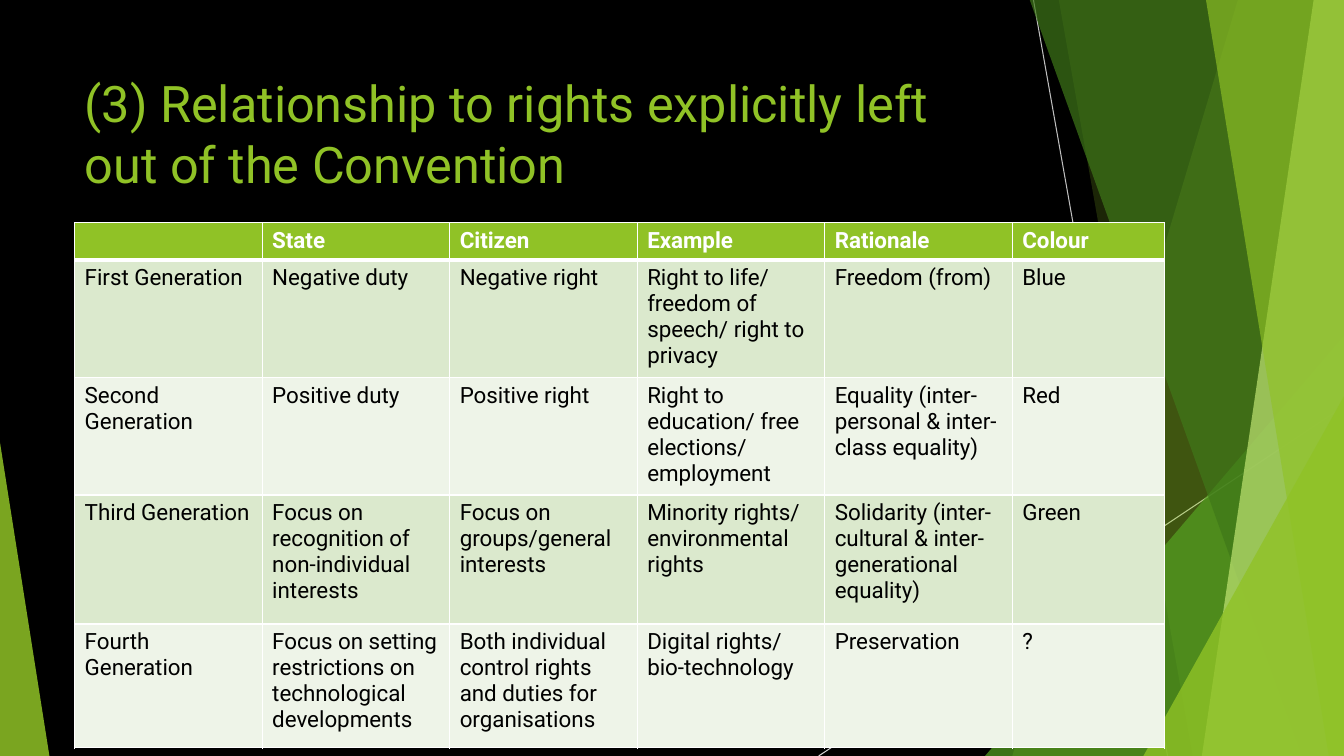
import pptx
import pptx.util
import pptx.dml.color
import pptx.enum.shapes
import pptx.enum.text
import pptx.oxml
from pptx.oxml.ns import qn
from lxml import etree

Inches, Pt = pptx.util.Inches, pptx.util.Pt
Color = pptx.dml.color.RGBColor
Kind = pptx.enum.shapes.MSO_SHAPE

WIDE, HIGH = 13.33, 7.5
FONT = "Roboto"
BLACK = Color(0x00, 0x00, 0x00)
WHITE = Color(0xFF, 0xFF, 0xFF)
LIME = Color(0x90, 0xC2, 0x26)
GRASS = Color(0x54, 0xA0, 0x21)
MOSS = Color(0x3F, 0x78, 0x19)
PALE = Color(0xC0, 0xE4, 0x74)
MIST = Color(0xDB, 0xE9, 0xCD)
FROST = Color(0xEE, 0xF4, 0xE8)
SILVER = Color(0xBF, 0xBF, 0xBF)
ASH = Color(0xD9, 0xD9, 0xD9)

TITLE = "(3) Relationship to rights explicitly left out of the Convention"
ROWS = [
    ("", "State", "Citizen", "Example", "Rationale", "Colour"),
    ("First Generation", "Negative duty", "Negative right",
     "Right to life/ freedom of speech/ right to privacy",
     "Freedom (from)", "Blue"),
    ("Second Generation", "Positive duty", "Positive right",
     "Right to education/ free elections/ employment",
     "Equality (inter-personal & inter-class equality)", "Red"),
    ("Third Generation", "Focus on recognition of non-individual interests",
     "Focus on groups/general interests",
     "Minority rights/ environmental rights",
     "Solidarity (inter-cultural & inter-generational equality)", "Green"),
    ("Fourth Generation",
     "Focus on setting restrictions on technological developments",
     "Both individual control rights and duties for organisations",
     "Digital rights/ bio-technology", "Preservation", "?"),
]
COLS = [1.86] * 5 + [1.51]
TALL = [0.36, 1.13, 1.13, 1.28, 1.23]

# start x, start y, end x, end y, colour
RAYS = [(10.25, 0, 11.58, HIGH, SILVER), (WIDE, 4.03, 8.12, HIGH, ASH)]
# Panels run to the right edge: top x, bottom x, colour, opacity
# Corners rise from the bottom edge: left, top, width, apex, colour, opacity
DECOR = [
    ("panel", 12.28, 10.04, LIME, 30),
    ("panel", 10.5, 11.83, LIME, 20),
    ("corner", 9.77, 3.33, 3.56, 1, GRASS, 72),
    ("panel", 10.21, 12.91, MOSS, 70),
    ("panel", 13.03, 11.92, PALE, 70),
    ("panel", 11.96, 13.18, LIME, 65),
    ("corner", 11.34, 3.93, 1.99, 1, LIME, 80),
    ("corner", 0, 4.39, 0.49, 0, LIME, 85),
]


def tint(shape, color, alpha):
    """Fill a shape with a see-through colour, without line or shadow."""
    shape.shadow.inherit = False
    shape.line.fill.background()
    shape.fill.solid()
    shape.fill.fore_color.rgb = color
    tone = shape._element.spPr.find(qn("a:solidFill"))[0]
    etree.SubElement(tone, qn("a:alpha"), val=str(alpha * 1000))


def add_ray(slide, x1, y1, x2, y2, color):
    ray = slide.shapes.add_connector(
        pptx.enum.shapes.MSO_CONNECTOR.STRAIGHT,
        Inches(x1), Inches(y1), Inches(x2), Inches(y2))
    ray.line.color.rgb = color
    ray.line.width = Pt(0.75)
    etree.SubElement(ray._element.spPr, qn("a:effectLst"))


def add_panel(slide, top, base, color, alpha):
    pen = slide.shapes.build_freeform(
        Inches(top), Inches(-0.01), scale=1.0)
    pen.add_line_segments(
        [(Inches(x), Inches(y)) for x, y in
         ((WIDE, -0.01), (WIDE, HIGH), (base, HIGH))], close=True)
    tint(pen.convert_to_shape(), color, alpha)


def add_corner(slide, left, top, width, apex, color, alpha):
    shape = slide.shapes.add_shape(
        Kind.ISOSCELES_TRIANGLE, Inches(left), Inches(top),
        Inches(width), Inches(HIGH - top))
    shape.adjustments[0] = apex
    tint(shape, color, alpha)


def style(para, size, color, bold=False):
    para.font.name = FONT
    para.font.size = Pt(size)
    para.font.color.rgb = color
    para.font.bold = bold


def add_title(slide):
    box = slide.shapes.add_textbox(
        Inches(0.74), Inches(0.67), Inches(9.4), Inches(1.44))
    frame = box.text_frame
    frame.word_wrap = True
    frame.vertical_anchor = pptx.enum.text.MSO_ANCHOR.TOP
    frame.text = TITLE
    style(frame.paragraphs[0], 36, LIME)


def edge(cell, head, first):
    """Draw white cell borders, with a thick rule below the header."""
    props = cell._tc.get_or_add_tcPr()
    for spot, side in enumerate("LRTB"):
        thick = (head and side == "B") or (first and side == "T")
        line = etree.Element(
            qn("a:ln" + side), w=str(Pt(3 if thick else 1)))
        fill = etree.SubElement(line, qn("a:solidFill"))
        etree.SubElement(fill, qn("a:srgbClr"), val=str(WHITE))
        props.insert(spot, line)


def add_grid(slide):
    grid = slide.shapes.add_table(
        len(ROWS), len(COLS), Inches(0.74), Inches(2.21),
        Inches(sum(COLS)), Inches(sum(TALL))).table
    for col, width in zip(grid.columns, COLS):
        col.width = Inches(width)
    for r, texts in enumerate(ROWS):
        grid.rows[r].height = Inches(TALL[r])
        head = r == 0
        band = LIME if head else (MIST if r % 2 else FROST)
        for c, text in enumerate(texts):
            cell = grid.cell(r, c)
            cell.text = text
            style(cell.text_frame.paragraphs[0], 16,
                  WHITE if head else BLACK, head)
            cell.fill.solid()
            cell.fill.fore_color.rgb = band
            edge(cell, head, r == 1)


def main():
    deck = pptx.Presentation()
    deck.slide_width, deck.slide_height = Inches(WIDE), Inches(HIGH)
    slide = deck.slides.add_slide(deck.slide_layouts[6])
    slide.background.fill.solid()
    slide.background.fill.fore_color.rgb = BLACK
    for ray in RAYS:
        add_ray(slide, *ray)
    draw = {"panel": add_panel, "corner": add_corner}
    for kind, *args in DECOR:
        draw[kind](slide, *args)
    add_title(slide)
    add_grid(slide)
    deck.save("out.pptx")


if __name__ == "__main__":
    main()
